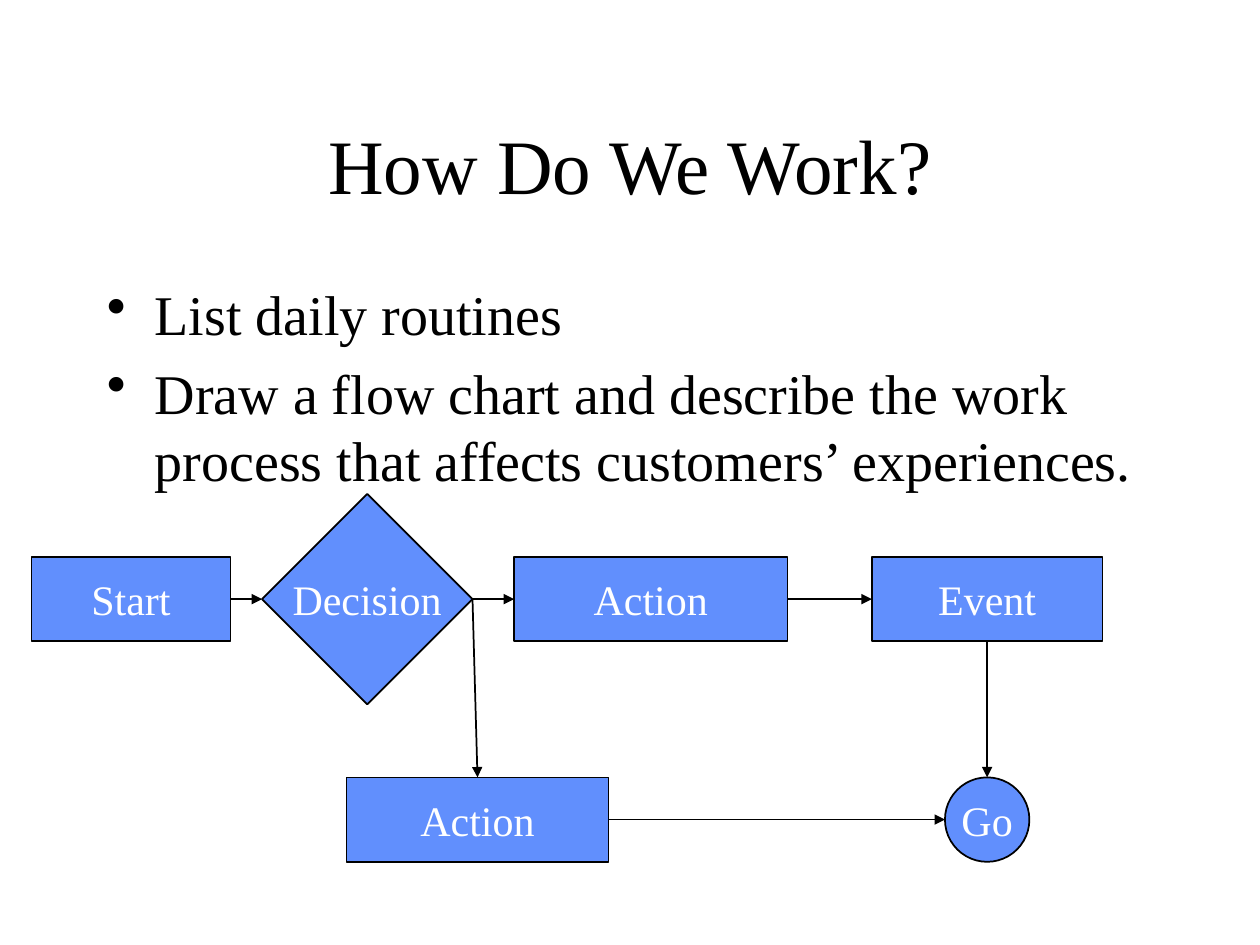
from lxml import etree
from pptx import Presentation
from pptx.dml.color import RGBColor
from pptx.enum.shapes import MSO_CONNECTOR, MSO_SHAPE
from pptx.enum.text import MSO_ANCHOR, PP_ALIGN
from pptx.oxml.ns import qn
from pptx.util import Inches, Pt

RECT = MSO_SHAPE.RECTANGLE
DIAMOND = MSO_SHAPE.FLOWCHART_DECISION
CIRCLE = MSO_SHAPE.OVAL
STRAIGHT = MSO_CONNECTOR.STRAIGHT
MIDDLE = MSO_ANCHOR.MIDDLE
CENTER = PP_ALIGN.CENTER

FONT = "Times New Roman"
BLACK, WHITE, BLUE = "000000", "FFFFFF", "618FFD"
TOP, LEFT, BOTTOM, RIGHT = range(4)


def color(hex_code):
    return RGBColor.from_string(hex_code)


def set_font(paragraph, size, hex_code):
    paragraph.font.name = FONT
    paragraph.font.size = Pt(size)
    paragraph.font.color.rgb = color(hex_code)


def add_title(slide, box, text):
    frame = slide.shapes.add_textbox(*map(Inches, box)).text_frame
    frame.word_wrap = True
    frame.vertical_anchor = MIDDLE
    heading = frame.paragraphs[0]
    heading.text = text
    heading.alignment = CENTER
    set_font(heading, 44, BLACK)


def add_bullets(slide, box, items):
    frame = slide.shapes.add_textbox(*map(Inches, box)).text_frame
    frame.word_wrap = True
    for index, item in enumerate(items):
        bullet = frame.paragraphs[0] if index == 0 else frame.add_paragraph()
        bullet.text = item
        bullet.space_before = Pt(6.4)
        set_font(bullet, 32, BLACK)
        # Hanging indent and bullet character
        properties = bullet._p.get_or_add_pPr()
        properties.set("marL", str(Inches(0.38)))
        properties.set("indent", str(-Inches(0.38)))
        mark = etree.Element(qn("a:buChar"), char="•")
        properties.find(qn("a:defRPr")).addprevious(mark)


def add_step(slide, kind, box, label):
    step = slide.shapes.add_shape(kind, *map(Inches, box))
    step.shadow.inherit = False
    step.fill.solid()
    step.fill.fore_color.rgb = color(BLUE)
    step.line.color.rgb = color(BLACK)
    step.line.width = Pt(1)
    frame = step.text_frame
    frame.word_wrap = False
    frame.vertical_anchor = MIDDLE
    caption = frame.paragraphs[0]
    caption.text = label
    caption.alignment = CENTER
    set_font(caption, 24, WHITE)
    return step


def side_point(step, side):
    x = {LEFT: 0, RIGHT: step.width}.get(side, step.width // 2)
    y = {TOP: 0, BOTTOM: step.height}.get(side, step.height // 2)
    return step.left + x, step.top + y


def add_arrow(slide, source, source_side, target, target_side):
    arrow = slide.shapes.add_connector(
        STRAIGHT, *side_point(source, source_side), *side_point(target, target_side))
    arrow.begin_connect(source, source_side)
    # A circle numbers its sites differently, except for the top one
    if target.auto_shape_type != CIRCLE or target_side == TOP:
        arrow.end_connect(target, target_side)
    arrow.line.color.rgb = color(BLACK)
    arrow.line.width = Pt(1)
    etree.SubElement(arrow.line._get_or_add_ln(), qn("a:tailEnd"), type="triangle")
    etree.SubElement(arrow._element.spPr, qn("a:effectLst"))


def add_flow_chart(slide, box):
    left, top, width, height = box
    step_height = 0.67
    diamond_size = 1.67
    upper = top + (diamond_size - step_height) / 2
    lower = top + height - step_height

    # Upper row
    start = add_step(slide, RECT, (left, upper, 1.58, step_height), "Start")
    decision = add_step(
        slide, DIAMOND, (left + 1.83, top, diamond_size, diamond_size), "Decision")
    action = add_step(slide, RECT, (left + 3.83, upper, 2.17, step_height), "Action")
    event = add_step(
        slide, RECT, (left + width - 1.83, upper, 1.83, step_height), "Event")

    # Lower row
    other_action = add_step(
        slide, RECT, (left + 2.5, lower, 2.08, step_height), "Action")
    go = add_step(slide, CIRCLE, (left + 7.25, lower, step_height, step_height), "Go")

    # Arrows
    for link in (
        (start, RIGHT, decision, LEFT),
        (decision, RIGHT, action, LEFT),
        (decision, RIGHT, other_action, TOP),
        (action, RIGHT, event, LEFT),
        (event, BOTTOM, go, TOP),
        (other_action, RIGHT, go, LEFT),
    ):
        add_arrow(slide, *link)


def main():
    deck = Presentation()
    deck.slide_width, deck.slide_height = Inches(10), Inches(7.5)
    slide = deck.slides.add_slide(deck.slide_layouts[6])
    add_title(slide, (0.75, 0.67, 8.5, 1.25), "How Do We Work?")
    add_bullets(slide, (0.75, 2.17, 8.5, 4.5), [
        "List daily routines",
        "Draw a flow chart and describe the work process "
        "that affects customers’ experiences.",
    ])
    add_flow_chart(slide, (0.25, 3.92, 8.5, 2.92))
    deck.save("out.pptx")


if __name__ == "__main__":
    main()
